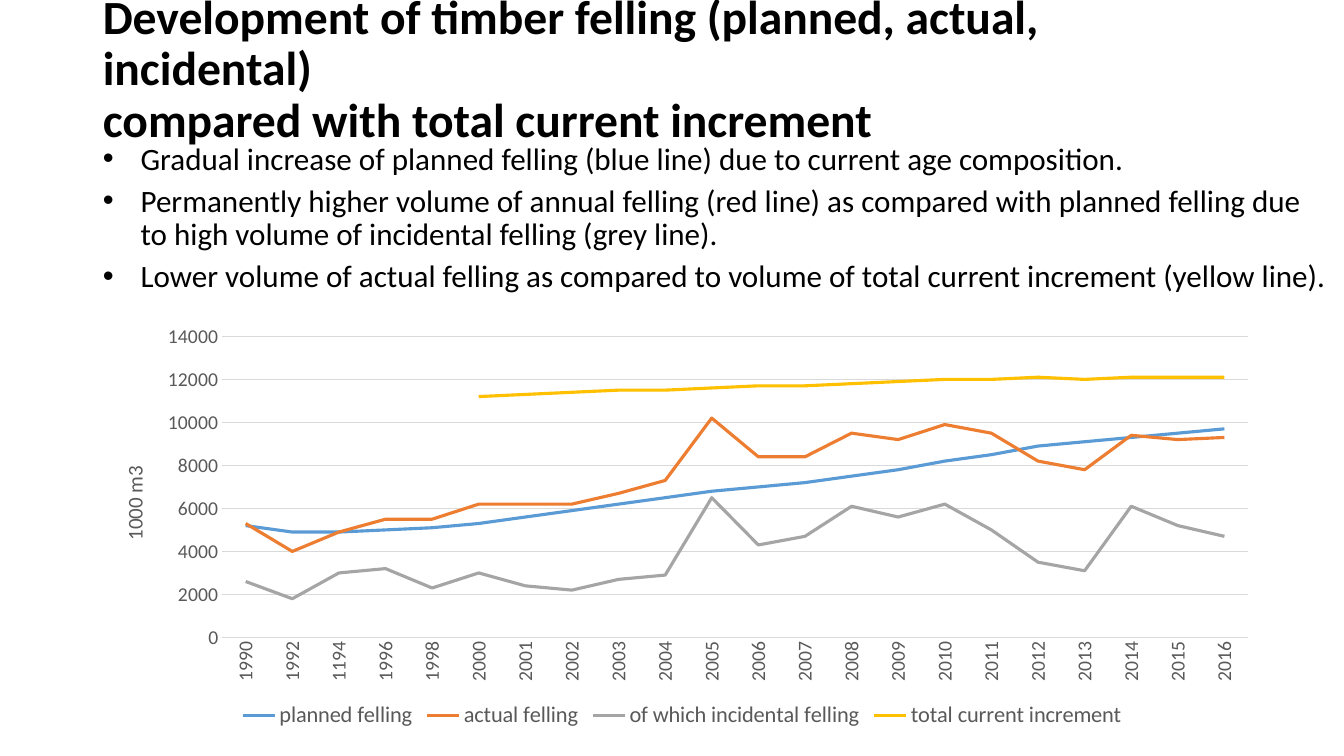
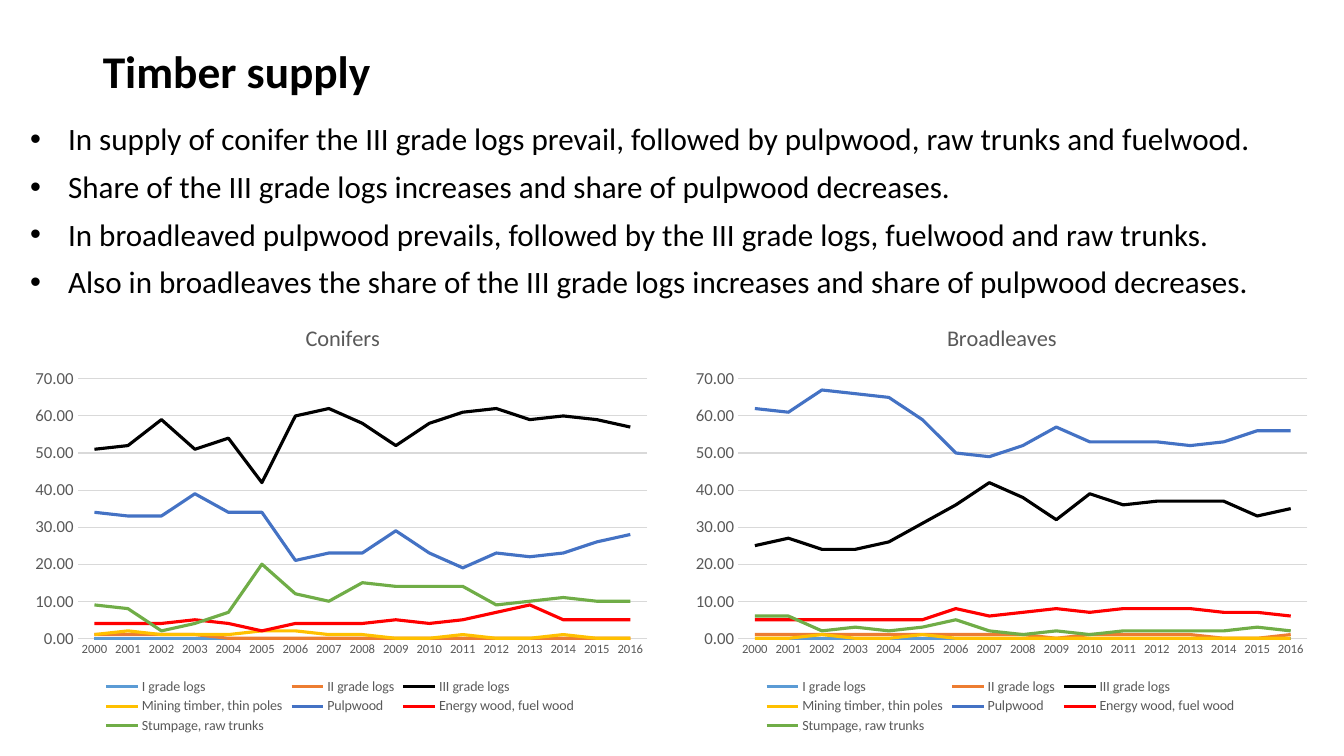
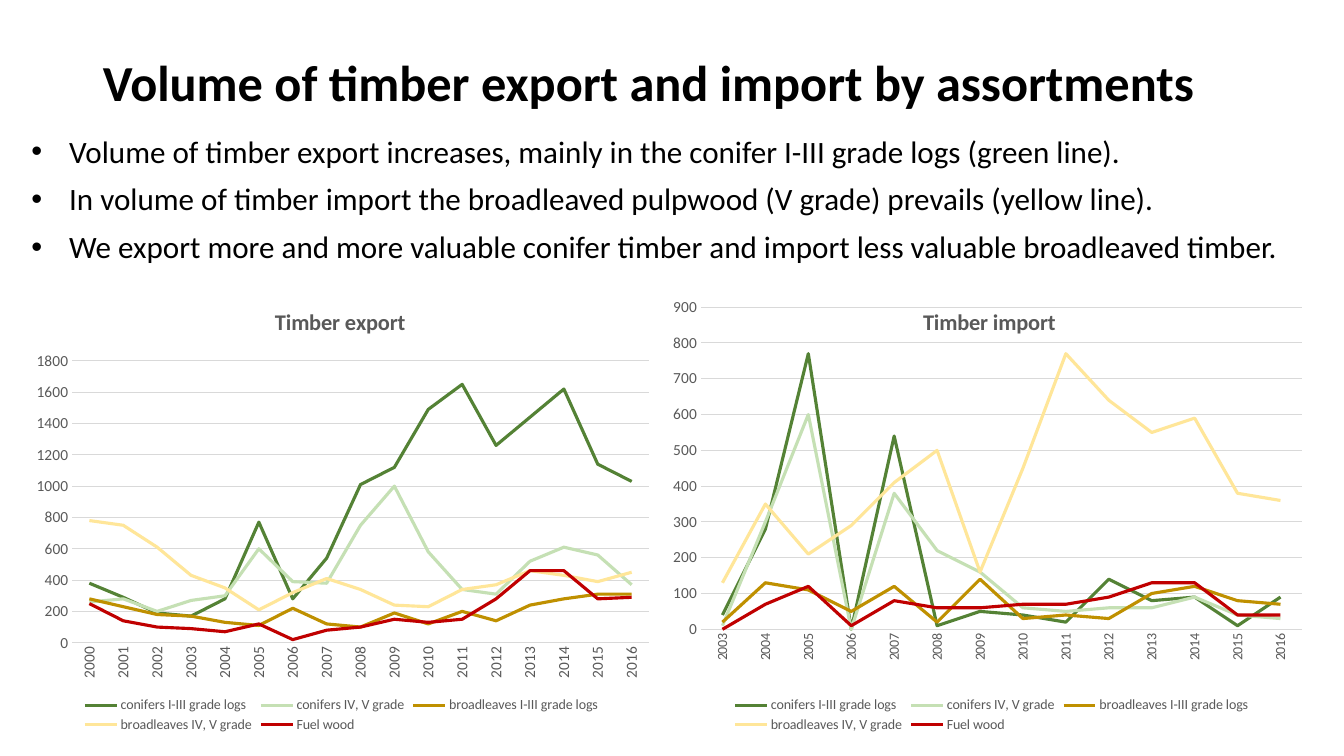
"""Build three slides on timber felling, supply and trade."""
from dataclasses import dataclass

from pptx import Presentation
from pptx import util as u
from pptx.chart import data as chart_data
from pptx.dml import color
from pptx.enum import chart as ch
from pptx.enum import text
from pptx.oxml import ns, xmlchemy


@dataclass(frozen=True)
class Theme:
    """Fonts, colours and type sizes shared by the slides."""

    font: str = "Calibri"
    ink: str = "000000"
    muted: str = "595959"
    rule: str = "D9D9D9"
    blue: str = "5B9BD5"
    deep_blue: str = "4472C4"
    orange: str = "ED7D31"
    grey: str = "A5A5A5"
    yellow: str = "FFC000"
    red: str = "FF0000"
    green: str = "70AD47"
    dark_green: str = "548235"
    pale_green: str = "C5E0B4"
    ochre: str = "BF9000"
    pale_yellow: str = "FFE699"
    dark_red: str = "C00000"
    body: float = 22.2
    chart_title: float = 16
    axis_title: float = 15
    line: float = 2.25
    hairline: float = 0.75
    leading: float = 0.9


@dataclass(frozen=True)
class ChartStyle:
    """Type sizes, scale and plot area of one line chart."""

    plot: tuple
    top: float
    step: float
    year_size: float
    value_size: float
    legend_size: float = 10
    upright_years: bool = False
    number_format: str = "General"
    bold_title: bool = False


THEME = Theme()
WIDTH, HEIGHT = u.Inches(13.33), u.Inches(7.5)

FELLING_YEARS = [1990, 1992, 1194, 1996, 1998, *range(2000, 2017)]
FELLING = [
    ("planned felling", THEME.blue,
     [5200, 4900, 4900, 5000, 5100, 5300, 5600, 5900, 6200, 6500, 6800,
      7000, 7200, 7500, 7800, 8200, 8500, 8900, 9100, 9300, 9500, 9700]),
    ("actual felling", THEME.orange,
     [5300, 4000, 4900, 5500, 5500, 6200, 6200, 6200, 6700, 7300, 10200,
      8400, 8400, 9500, 9200, 9900, 9500, 8200, 7800, 9400, 9200, 9300]),
    ("of which incidental felling", THEME.grey,
     [2600, 1800, 3000, 3200, 2300, 3000, 2400, 2200, 2700, 2900, 6500,
      4300, 4700, 6100, 5600, 6200, 5000, 3500, 3100, 6100, 5200, 4700]),
    ("total current increment", THEME.yellow,
     [*[None] * 5, 11200, 11300, 11400, 11500, 11500, 11600,
      11700, 11700, 11800, 11900, 12000, 12000, 12100, 12000, 12100, 12100, 12100]),
]

GRADES = [
    ("I grade logs", THEME.blue),
    ("II grade logs", THEME.orange),
    ("III grade logs", THEME.ink),
    ("Mining timber, thin poles", THEME.yellow),
    ("Pulpwood", THEME.deep_blue),
    ("Energy wood, fuel wood", THEME.red),
    ("Stumpage, raw trunks", THEME.green),
]
CONIFERS = [
    [0] * 17,
    [1, 1, 1, 1, 0, 0, 0, 0, 0, 0, 0, 0, 0, 0, 0, 0, 0],
    [51, 52, 59, 51, 54, 42, 60, 62, 58, 52, 58, 61, 62, 59, 60, 59, 57],
    [1, 2, 1, 1, 1, 2, 2, 1, 1, 0, 0, 1, 0, 0, 1, 0, 0],
    [34, 33, 33, 39, 34, 34, 21, 23, 23, 29, 23, 19, 23, 22, 23, 26, 28],
    [4, 4, 4, 5, 4, 2, 4, 4, 4, 5, 4, 5, 7, 9, 5, 5, 5],
    [9, 8, 2, 4, 7, 20, 12, 10, 15, 14, 14, 14, 9, 10, 11, 10, 10],
]
BROADLEAVES = [
    [0] * 17,
    [1, 1, 1, 1, 1, 1, 1, 1, 1, 0, 1, 1, 1, 1, 0, 0, 1],
    [25, 27, 24, 24, 26, 31, 36, 42, 38, 32, 39, 36, 37, 37, 37, 33, 35],
    [0, 0, 1, 0, 0, 1, 0, 0, 0, 0, 0, 0, 0, 0, 0, 0, 0],
    [62, 61, 67, 66, 65, 59, 50, 49, 52, 57, 53, 53, 53, 52, 53, 56, 56],
    [5, 5, 5, 5, 5, 5, 8, 6, 7, 8, 7, 8, 8, 8, 7, 7, 6],
    [6, 6, 2, 3, 2, 3, 5, 2, 1, 2, 1, 2, 2, 2, 2, 3, 2],
]

ASSORTMENTS = [
    ("conifers I-III grade logs", THEME.dark_green),
    ("conifers IV, V grade", THEME.pale_green),
    ("broadleaves I-III grade logs", THEME.ochre),
    ("broadleaves IV, V grade", THEME.pale_yellow),
    ("Fuel wood", THEME.dark_red),
]
EXPORT = [
    [380, 290, 190, 170, 280, 770, 280, 540, 1010, 1120, 1490, 1650, 1260, 1440,
     1620, 1140, 1030],
    [260, 280, 200, 270, 300, 600, 390, 380, 750, 1000, 580, 340, 310, 520, 610,
     560, 370],
    [280, 230, 180, 170, 130, 110, 220, 120, 100, 190, 120, 200, 140, 240, 280,
     310, 310],
    [780, 750, 610, 430, 350, 210, 320, 410, 340, 240, 230, 340, 370, 460, 430,
     390, 450],
    [250, 140, 100, 90, 70, 120, 20, 80, 100, 150, 130, 150, 280, 460, 460, 280,
     290],
]
IMPORT = [
    [40, 280, 770, 0, 540, 10, 50, 40, 20, 140, 80, 90, 10, 90],
    [10, 300, 600, 0, 380, 220, 160, 60, 50, 60, 60, 90, 40, 30],
    [20, 130, 110, 50, 120, 20, 140, 30, 40, 30, 100, 120, 80, 70],
    [130, 350, 210, 290, 410, 500, 160, 450, 770, 640, 550, 590, 380, 360],
    [0, 70, 120, 10, 80, 60, 60, 70, 70, 90, 130, 130, 40, 40],
]


def area(left, top, width, height):
    """Turn percentages of the slide into a left, top, width, height tuple."""
    return (u.Emu(int(WIDTH * left / 100)), u.Emu(int(HEIGHT * top / 100)),
            u.Emu(int(WIDTH * width / 100)), u.Emu(int(HEIGHT * height / 100)))


def set_font(font, size, ink, bold=False):
    """Apply the theme font with a size, colour and weight."""
    font.name = THEME.font
    font.size = u.Pt(size)
    font.bold = bold
    font.color.rgb = color.RGBColor.from_string(ink)


def set_line(line, ink, width):
    """Give a line its colour and width in points."""
    line.color.rgb = color.RGBColor.from_string(ink)
    line.width = u.Pt(width)


def fill_placeholder(box, words, bounds, size, anchor, gap=0, bold=False):
    """Place a placeholder and format its paragraphs."""
    box.left, box.top, box.width, box.height = area(*bounds)
    frame = box.text_frame
    frame.text = words
    frame.word_wrap = True
    frame.auto_size = text.MSO_AUTO_SIZE.NONE
    frame.vertical_anchor = anchor
    for para in frame.paragraphs:
        para.alignment = text.PP_ALIGN.LEFT
        para.line_spacing = THEME.leading
        para.space_before = u.Pt(gap)
        for span in para.runs:
            set_font(span.font, size, THEME.ink, bold)


def add_page(deck, title, title_bounds, title_size, bullets, body_bounds, gap=10):
    """Add a slide with a bold title and a bulleted list."""
    page = deck.slides.add_slide(deck.slide_layouts[1])
    fill_placeholder(page.shapes.title, title, title_bounds, title_size,
                     text.MSO_ANCHOR.MIDDLE, bold=True)
    fill_placeholder(page.placeholders[1], "\n".join(bullets), body_bounds, THEME.body,
                     text.MSO_ANCHOR.BOTTOM, gap)
    return page


def set_layout(parent, shares, index):
    """Set a manual layout on a chart part as shares of the chart."""
    for old in parent.findall(ns.qn("c:layout")):
        parent.remove(old)
    layout = xmlchemy.OxmlElement("c:layout")
    manual = xmlchemy.OxmlElement("c:manualLayout")
    layout.append(manual)
    values = [("layoutTarget", "inner")] if len(shares) == 4 else []
    values += [("xMode", "edge"), ("yMode", "edge"), *zip("xywh", shares)]
    for tag, value in values:
        item = xmlchemy.OxmlElement(f"c:{tag}")
        item.set("val", str(value))
        manual.append(item)
    parent.insert(index, layout)


def set_title(title, words, size, corner, bold=False):
    """Write a chart or axis title with its top left corner at a given share."""
    title.text_frame.text = words
    set_font(title.text_frame.paragraphs[0].runs[0].font, size, THEME.muted, bold)
    set_layout(title.element, corner, 1)


def turn_upright(element, query):
    """Turn the text bodies found by a query to read upwards."""
    for body in element.xpath(query):
        body.set("rot", "-5400000")
        body.set("vert", "horz")


def style_axes(chart, style):
    """Format the year and value axes and the gridlines."""
    years, values = chart.category_axis, chart.value_axis
    for axis, size in ((years, style.year_size), (values, style.value_size)):
        axis.major_tick_mark = axis.minor_tick_mark = ch.XL_TICK_MARK.NONE
        set_font(axis.tick_labels.font, size, THEME.muted)
    set_line(years.format.line, THEME.rule, THEME.hairline)
    values.format.line.fill.background()
    values.has_major_gridlines = True
    set_line(values.major_gridlines.format.line, THEME.rule, THEME.hairline)
    values.minimum_scale, values.maximum_scale = 0, style.top
    values.major_unit = style.step
    values.tick_labels.number_format = style.number_format
    values.tick_labels.number_format_is_linked = False
    if style.upright_years:
        turn_upright(chart.element, ".//c:catAx/c:txPr/a:bodyPr")


def add_line_chart(page, bounds, years, series, style, title=None, corner=None):
    """Add a line chart with a legend below it."""
    data = chart_data.CategoryChartData(number_format=style.number_format)
    data.categories = [str(year) for year in years]
    for name, _, numbers in series:
        data.add_series(name, numbers)
    chart = page.shapes.add_chart(ch.XL_CHART_TYPE.LINE, *area(*bounds), data).chart
    set_font(chart.font, 10, THEME.ink)
    chart.has_title = title is not None
    if title:
        set_title(chart.chart_title, title, THEME.chart_title, corner, style.bold_title)
    chart.has_legend = True
    chart.legend.position = ch.XL_LEGEND_POSITION.BOTTOM
    chart.legend.include_in_layout = False
    set_font(chart.legend.font, style.legend_size, THEME.muted)
    chart.plots[0].vary_by_categories = False
    for line, (_, ink, _) in zip(chart.plots[0].series, series):
        line.smooth = False
        line.marker.style = ch.XL_MARKER_STYLE.NONE
        set_line(line.format.line, ink, THEME.line)
    style_axes(chart, style)
    set_layout(chart.element.xpath(".//c:plotArea")[0], style.plot, 0)
    return chart


def with_values(keys, rows):
    """Join series names and colours with their rows of values."""
    return [(name, ink, row) for (name, ink), row in zip(keys, rows)]


def add_felling(deck):
    """Add the slide on felling and increment."""
    page = add_page(
        deck,
        "Development of timber felling (planned, actual, incidental)\v"
        "compared with total current increment",
        (6.9, 2.8, 86.27, 13.07), 34,
        ["Gradual increase of planned felling (blue line) due to current age composition.",
         "Permanently higher volume of annual felling (red line) as compared with planned "
         "felling due to high volume of incidental felling (grey line).",
         "Lower volume of actual felling as compared to volume of total current increment "
         "(yellow line)."],
        (6.9, 17.47, 93.1, 22.13), gap=6)
    style = ChartStyle((0.11, 0.05, 0.87, 0.72), 14000, 2000, 14, 14, 16,
                       upright_years=True)
    chart = add_line_chart(page, (6.9, 41.73, 87.7, 55.33), FELLING_YEARS, FELLING, style)
    axis_title = chart.value_axis.axis_title
    set_title(axis_title, "1000 m3", THEME.axis_title, (0.02, 0.35))
    turn_upright(axis_title.element, ".//a:bodyPr")


def add_supply(deck):
    """Add the slide on timber supply."""
    page = add_page(
        deck, "Timber supply", (6.9, 5.87, 86.27, 7.87), 32.4,
        ["In supply of conifer the III grade logs prevail, followed by pulpwood, raw trunks "
         "and fuelwood.",
         "Share of the III grade logs increases and share of pulpwood decreases.",
         "In broadleaved pulpwood prevails, followed by the III grade logs, fuelwood and "
         "raw trunks.",
         "Also in broadleaves the share of the III grade logs increases and share of "
         "pulpwood decreases."],
        (1.5, 15.33, 98.5, 25.07))
    style = ChartStyle((0.09, 0.17, 0.89, 0.6), 70, 10, 9, 12, number_format="0.00")
    for left, title, corner, rows in (
            (1.5, "Conifers", (0.44, 0.03), CONIFERS),
            (50.64, "Broadleaves", (0.41, 0.03), BROADLEAVES)):
        add_line_chart(page, (left, 40.4, 47.6, 57.2), range(2000, 2017),
                       with_values(GRADES, rows), style, title, corner)


def add_trade(deck):
    """Add the slide on export and import."""
    page = add_page(
        deck, "Volume of timber export and import by assortments",
        (6.9, 5.33, 86.27, 11.87), 36,
        ["Volume of timber export increases, mainly in the conifer I-III grade logs "
         "(green line).",
         "In volume of timber import the broadleaved pulpwood (V grade) prevails "
         "(yellow line).",
         "We export more and more valuable conifer timber and import less valuable "
         "broadleaved timber."],
        (1.58, 17.2, 96.77, 18.53))
    outgoing = ChartStyle((0.08, 0.16, 0.9, 0.63), 1800, 200, 11, 11,
                          upright_years=True, bold_title=True)
    incoming = ChartStyle((0.06, 0.04, 0.91, 0.72), 900, 100, 10, 11,
                          upright_years=True, bold_title=True)
    for left, width, first, title, rows, style in (
            (1.58, 47.64, 2000, "Timber export", EXPORT, outgoing),
            (49.21, 49.14, 2003, "Timber import", IMPORT, incoming)):
        add_line_chart(page, (left, 38.27, width, 59.2), range(first, 2017),
                       with_values(ASSORTMENTS, rows), style, title, (0.39, 0.03))


def main():
    """Build and save the deck."""
    deck = Presentation()
    deck.slide_width, deck.slide_height = WIDTH, HEIGHT
    add_felling(deck)
    add_supply(deck)
    add_trade(deck)
    deck.save("out.pptx")


if __name__ == "__main__":
    main()
